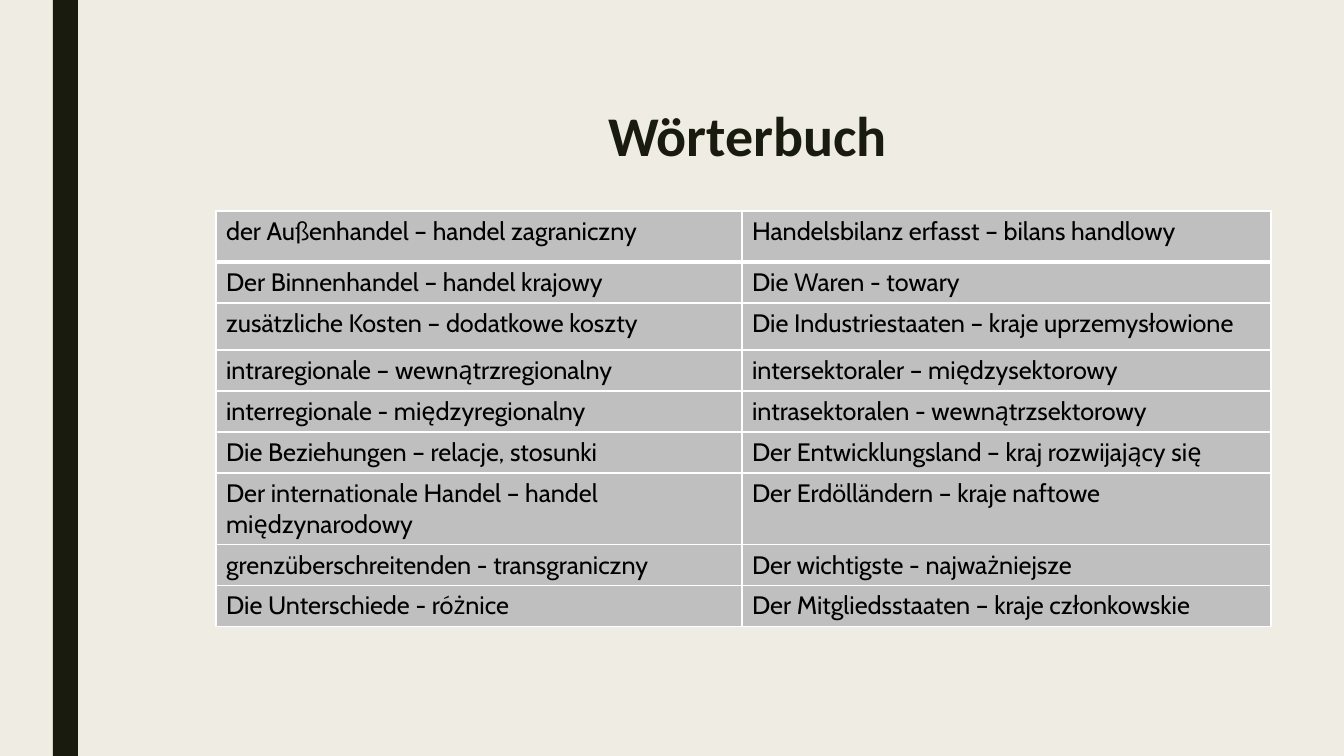
"""Build the German-Polish vocabulary slide."""
import dataclasses
import typing

import lxml.etree
import pptx
import pptx.dml.color
import pptx.enum.shapes
import pptx.enum.text
import pptx.oxml.ns
import pptx.util

EMU_PER_PX = 914400 / 100.8
TITLE_ONLY_LAYOUT = 5
COLORS = {"background": "EFEDE3", "dark": "191B0E", "cell": "BFBFBF", "text": "000000", "border": "FFFFFF"}
TITLE_FONT = {"name": "Calibri", "size": pptx.util.Pt(40), "bold": True}
CELL_FONT = {"name": "Cabin", "size": pptx.util.Pt(18), "bold": False}
THIN_BORDER, HEADER_BORDER = 1, 3
COLUMN_WIDTHS = (526, 529)


@dataclasses.dataclass(frozen=True)
class Box:
    """Place and size in px."""
    left: int
    top: int
    width: int
    height: int


@dataclasses.dataclass(frozen=True)
class VocabularyRow:
    """Two entries side by side and the row height in px."""
    left_entry: str
    right_entry: str
    height: int = 41


VOCABULARY = (
    VocabularyRow("der Außenhandel – handel zagraniczny", "Handelsbilanz erfasst – bilans handlowy", 51),
    VocabularyRow("Der Binnenhandel – handel krajowy", "Die Waren - towary"),
    VocabularyRow("zusätzliche Kosten – dodatkowe koszty", "Die Industriestaaten – kraje uprzemysłowione", 47),
    VocabularyRow("intraregionale – wewnątrzregionalny", "intersektoraler – międzysektorowy"),
    VocabularyRow("interregionale - międzyregionalny", "intrasektoralen - wewnątrzsektorowy"),
    VocabularyRow("Die Beziehungen – relacje, stosunki", "Der Entwicklungsland – kraj rozwijający się"),
    VocabularyRow("Der internationale Handel – handel międzynarodowy", "Der Erdölländern – kraje naftowe", 71),
    VocabularyRow("grenzüberschreitenden - transgraniczny", "Der wichtigste - najważniejsze"),
    VocabularyRow("Die Unterschiede - różnice", "Der Mitgliedsstaaten – kraje członkowskie"),
)
SIDE_BAR = Box(53, 0, 25, 756)
TITLE = Box(225, 104, 1058, 163)
TABLE = Box(216, 211, sum(COLUMN_WIDTHS), sum(row.height for row in VOCABULARY))


def px(length: int) -> pptx.util.Emu:
    """Turn px into EMU."""
    return pptx.util.Emu(round(length * EMU_PER_PX))


def color(name: str) -> pptx.dml.color.RGBColor:
    """Look up a named colour."""
    return pptx.dml.color.RGBColor.from_string(COLORS[name])


def set_attributes(target: typing.Any, values: dict[str, typing.Any]) -> None:
    """Set each format value on the target."""
    for name, value in values.items():
        setattr(target, name, value)


def fill_solid(fill: typing.Any, name: str) -> None:
    """Give a fill one named colour."""
    fill.solid()
    fill.fore_color.rgb = color(name)


def place(box: Box) -> dict[str, pptx.util.Emu]:
    """Give the box as shape attributes."""
    return {name: px(length) for name, length in dataclasses.asdict(box).items()}


def write(paragraph: typing.Any, text: str, font: dict[str, typing.Any], color_name: str) -> None:
    """Write one formatted run."""
    run = paragraph.add_run()
    run.text = text
    set_attributes(run.font, font)
    run.font.color.rgb = color(color_name)


def draw_side_bar(slide: typing.Any) -> None:
    """Draw the dark bar at the left."""
    shape = slide.shapes.add_shape(pptx.enum.shapes.MSO_SHAPE.RECTANGLE, **place(SIDE_BAR))
    shape.shadow.inherit = False
    fill_solid(shape.fill, "dark")
    shape.line.fill.background()


def draw_title(slide: typing.Any) -> None:
    """Move and format the title placeholder."""
    title = slide.shapes.title
    set_attributes(title, place(TITLE))
    set_attributes(title.text_frame, {
        "word_wrap": True,
        "auto_size": pptx.enum.text.MSO_AUTO_SIZE.NONE,
        "vertical_anchor": pptx.enum.text.MSO_ANCHOR.TOP,
        "margin_right": px(23),
    })
    paragraph = title.text_frame.paragraphs[0]
    set_attributes(paragraph, {"alignment": pptx.enum.text.PP_ALIGN.CENTER, "line_spacing": 0.89})
    write(paragraph, "Wörterbuch", TITLE_FONT, "dark")


def add_borders(cell: typing.Any, top: int, bottom: int) -> None:
    """Add the four cell borders, with widths in points."""
    properties = cell._tc.get_or_add_tcPr()
    widths = {"a:lnL": THIN_BORDER, "a:lnR": THIN_BORDER, "a:lnT": top, "a:lnB": bottom}
    for position, (tag, width) in enumerate(widths.items()):
        line = lxml.etree.Element(pptx.oxml.ns.qn(tag), w=str(pptx.util.Pt(width)))
        solid_fill = lxml.etree.SubElement(line, pptx.oxml.ns.qn("a:solidFill"))
        lxml.etree.SubElement(solid_fill, pptx.oxml.ns.qn("a:srgbClr"), val=COLORS["border"])
        properties.insert(position, line)


def draw_table(slide: typing.Any) -> None:
    """Draw the vocabulary table."""
    table = slide.shapes.add_table(len(VOCABULARY), len(COLUMN_WIDTHS), **place(TABLE)).table
    for column, width in zip(table.columns, COLUMN_WIDTHS):
        column.width = px(width)
    for row_index, row in enumerate(VOCABULARY):
        table.rows[row_index].height = px(row.height)
        top = HEADER_BORDER if row_index == 1 else THIN_BORDER
        bottom = HEADER_BORDER if row_index == 0 else THIN_BORDER
        for column_index, entry in enumerate((row.left_entry, row.right_entry)):
            cell = table.cell(row_index, column_index)
            fill_solid(cell.fill, "cell")
            write(cell.text_frame.paragraphs[0], entry, CELL_FONT, "text")
            add_borders(cell, top, bottom)


def main() -> None:
    """Build and save the presentation."""
    presentation = pptx.Presentation()
    set_attributes(presentation, {"slide_width": px(1344), "slide_height": px(756)})
    slide = presentation.slides.add_slide(presentation.slide_layouts[TITLE_ONLY_LAYOUT])
    fill_solid(slide.background.fill, "background")
    draw_side_bar(slide)
    draw_title(slide)
    draw_table(slide)
    presentation.save("out.pptx")


if __name__ == "__main__":
    main()
